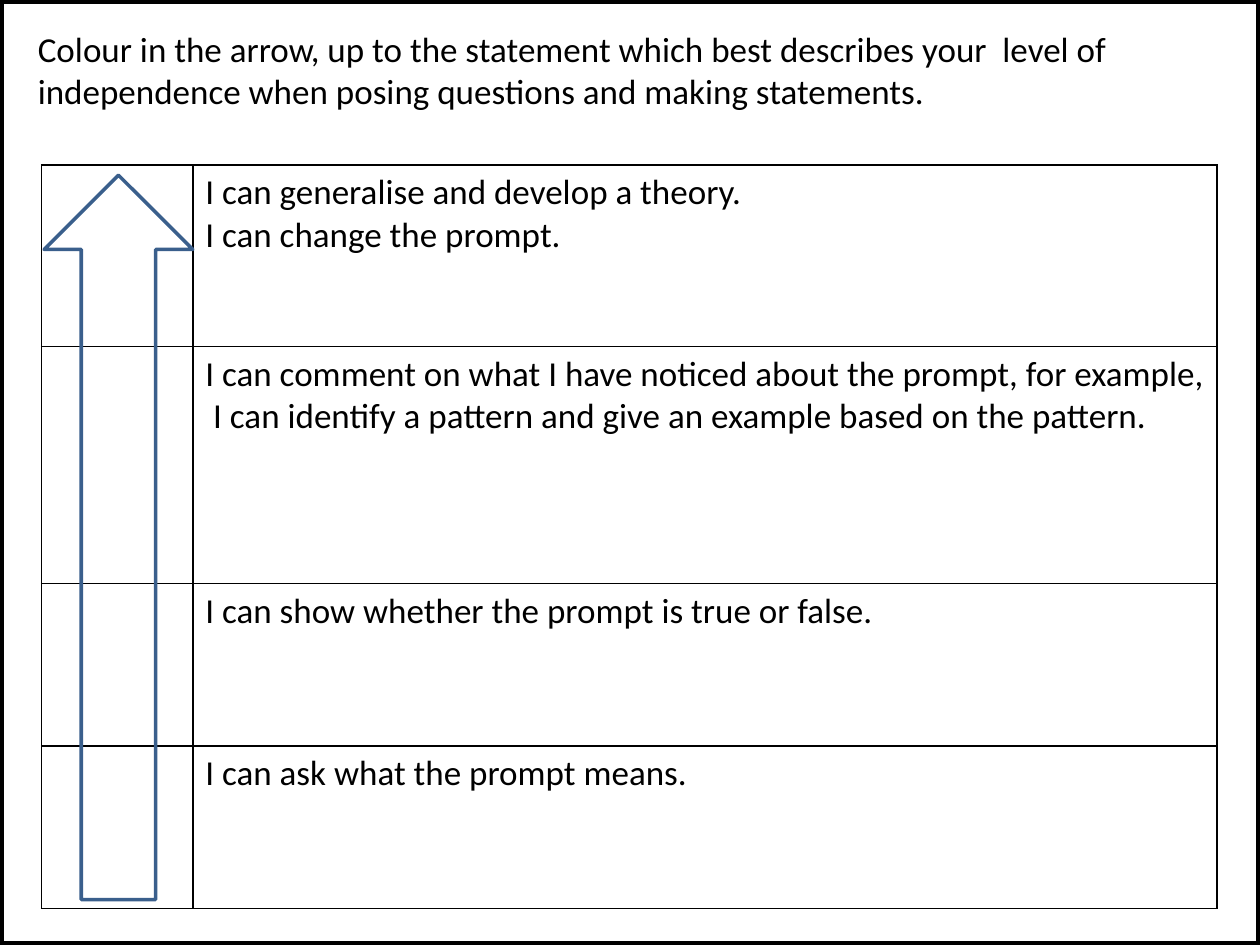
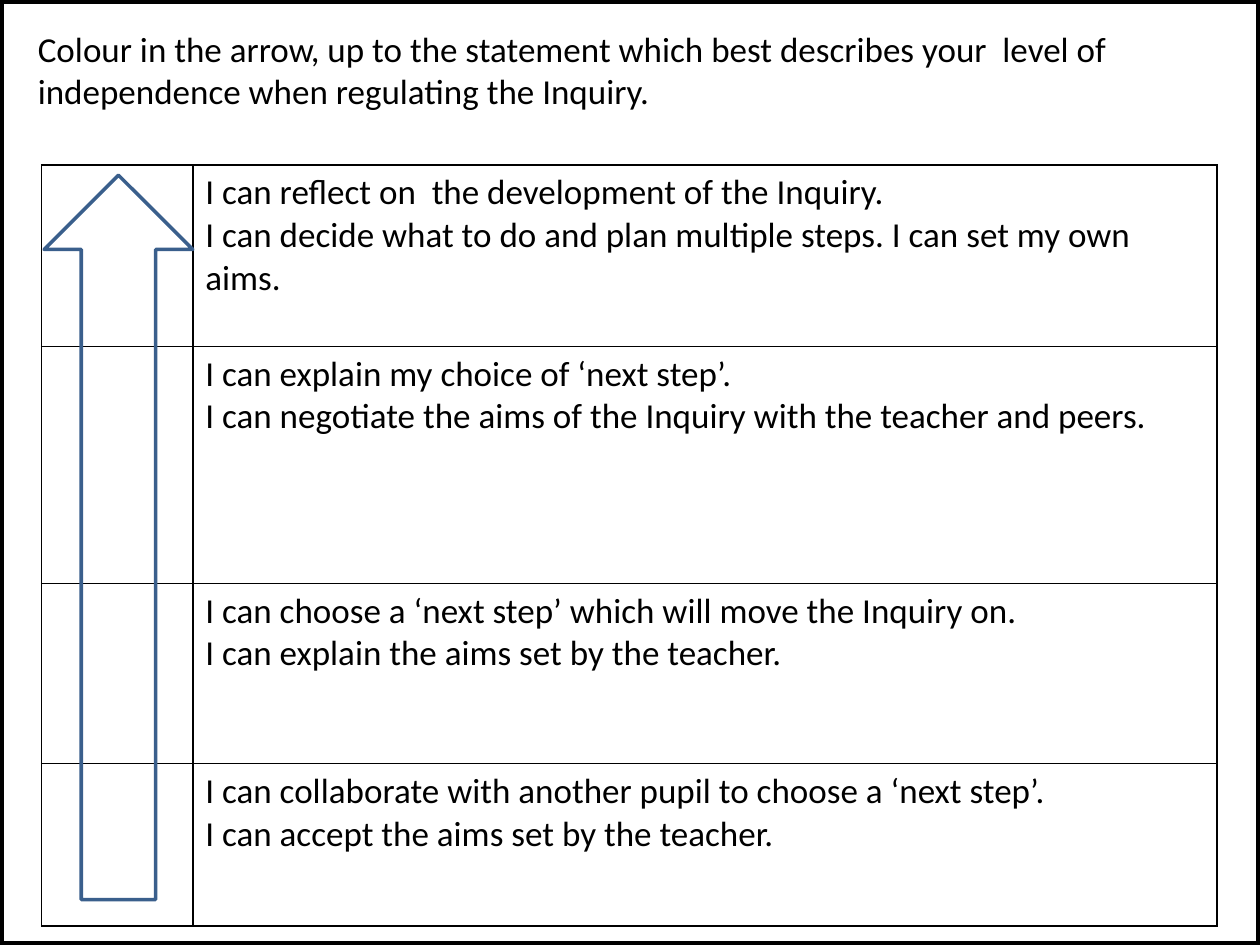
from lxml import etree
from pptx import Presentation
from pptx import util as u
from pptx.dml.color import RGBColor
from pptx.enum import shapes, text
from pptx.oxml import ns

COLOURS = {"ink": "000000", "paper": "FFFFFF", "arrow": "3A5F8C"}
FONT = "Calibri"
TEXT_SIZE = u.Pt(20)
BORDER = u.Pt(1)

presentation = Presentation()
presentation.slide_width = u.Inches(10)
presentation.slide_height = u.Inches(7.5)
WIDTH, HEIGHT = presentation.slide_width, presentation.slide_height

TABLE_LEFT, TABLE_TOP = u.Inches(0.33), u.Inches(1.31)
COLUMNS = [u.Inches(1.2), u.Inches(8.13)]
ARROW_INSET = u.Inches(0.02)

QUESTION = "Colour in the arrow, up to the statement which best describes your  level of independence when "

ladders = [
    {
        "skill": "posing questions and making statements.",
        "steps": [
            (1.44, "I can generalise and develop a theory.\nI can change the prompt."),
            (1.88, "I can comment on what I have noticed about the prompt, for example,  "
                   "I can identify a pattern and give an example based on the pattern."),
            (1.29, "I can show whether the prompt is true or false."),
            (1.29, "I can ask what the prompt means."),
        ],
    },
    {
        "skill": "regulating the Inquiry.",
        "steps": [
            (1.44, "I can reflect on  the development of the Inquiry.\n"
                   "I can decide what to do and plan multiple steps. I can set my own aims."),
            (1.88, "I can explain my choice of ‘next step’.\n"
                   "I can negotiate the aims of the Inquiry with the teacher and peers."),
            (1.43, "I can choose a ‘next step’ which will move the Inquiry on.\n"
                   "I can explain the aims set by the teacher."),
            (1.29, "I can collaborate with another pupil to choose a ‘next step’.\n"
                   "I can accept the aims set by the teacher."),
        ],
    },
]


def format_text(text_frame):
    for paragraph in text_frame.paragraphs:
        paragraph.alignment = text.PP_ALIGN.LEFT
        for run in paragraph.runs:
            run.font.name = FONT
            run.font.size = TEXT_SIZE
            run.font.bold = False
            run.font.color.rgb = RGBColor.from_string(COLOURS["ink"])


def add_outline(slide, preset, box, colour, weight):
    shape = slide.shapes.add_shape(preset, *box)
    shape.shadow.inherit = False
    shape.fill.background()
    shape.line.color.rgb = RGBColor.from_string(COLOURS[colour])
    shape.line.width = u.Pt(weight)


for ladder in ladders:
    slide = presentation.slides.add_slide(presentation.slide_layouts.get_by_name("Title Only"))

    title = slide.shapes.title
    title.left, title.top = u.Inches(0.2), u.Inches(0.17)
    title.width, title.height = u.Inches(9.39), u.Inches(0.77)
    title.fill.solid()
    title.fill.fore_color.rgb = RGBColor.from_string(COLOURS["paper"])
    title.text_frame.text = QUESTION + ladder["skill"]
    title.text_frame.word_wrap = True
    title.text_frame.auto_size = text.MSO_AUTO_SIZE.NONE
    title.text_frame.vertical_anchor = text.MSO_ANCHOR.TOP
    format_text(title.text_frame)

    add_outline(slide, shapes.MSO_SHAPE.RECTANGLE, (0, 0, WIDTH, HEIGHT), "ink", 5)

    steps = ladder["steps"]
    table_height = u.Inches(sum(height for height, statement in steps))
    table = slide.shapes.add_table(
        len(steps), len(COLUMNS), TABLE_LEFT, TABLE_TOP, sum(COLUMNS), table_height).table
    table.first_row = False
    table.horz_banding = False
    for column, width in zip(table.columns, COLUMNS):
        column.width = width
    for row, (height, statement) in zip(table.rows, steps):
        row.height = u.Inches(height)
        row.cells[1].text_frame.text = statement
        format_text(row.cells[1].text_frame)

    for cell in table.iter_cells():
        properties = cell._tc.get_or_add_tcPr()
        for side in ("lnL", "lnR", "lnT", "lnB"):
            line = etree.SubElement(properties, ns.qn("a:" + side), w=str(BORDER))
            fill = etree.SubElement(line, ns.qn("a:solidFill"))
            etree.SubElement(fill, ns.qn("a:srgbClr"), val=COLOURS["ink"])
        cell.fill.background()

    arrow_box = (TABLE_LEFT + ARROW_INSET, u.Inches(1.39), COLUMNS[0] - ARROW_INSET, u.Inches(5.75))
    add_outline(slide, shapes.MSO_SHAPE.UP_ARROW, arrow_box, "arrow", 2)

presentation.save("out.pptx")
